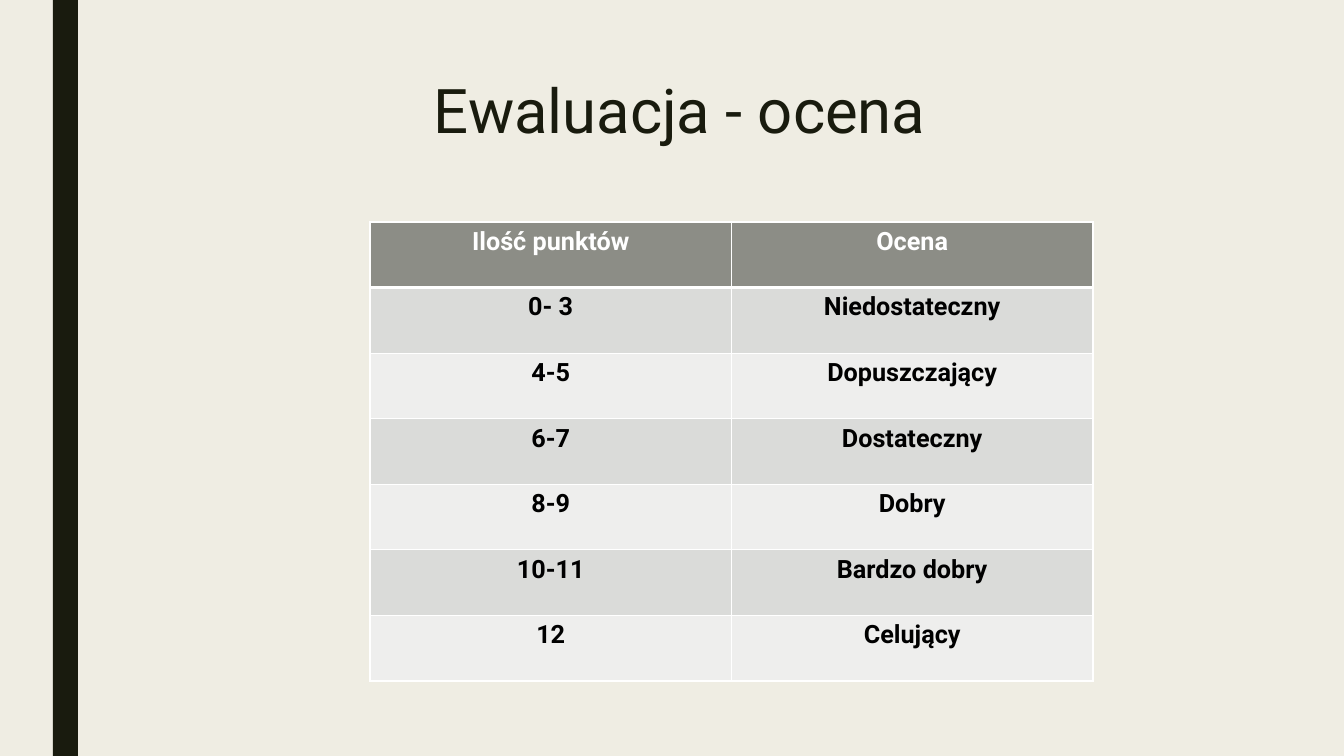
import pptx
import pptx.util
import pptx.dml.color
import pptx.enum.text
import pptx.oxml
import pptx.oxml.ns

RGBColor = pptx.dml.color.RGBColor
BACKGROUND = RGBColor(0xEF, 0xED, 0xE3)
DARK = RGBColor(0x19, 0x1B, 0x0E)
HEADER = RGBColor(0x8C, 0x8D, 0x86)
BAND_DARK = RGBColor(0xDA, 0xDB, 0xD9)
BAND_LIGHT = RGBColor(0xEE, 0xEE, 0xED)
WHITE = RGBColor(0xFF, 0xFF, 0xFF)
BLACK = RGBColor(0x00, 0x00, 0x00)

FONT = "Roboto"
SLIDE_WIDTH, SLIDE_HEIGHT = 1344, 756
EMU_PER_PX = 12192000 / SLIDE_WIDTH

GRADES = [
    ("Ilość punktów", "Ocena"),
    ("0- 3", "Niedostateczny"),
    ("4-5", "Dopuszczający"),
    ("6-7", "Dostateczny"),
    ("8-9", "Dobry"),
    ("10-11", "Bardzo dobry"),
    ("12", "Celujący"),
]


def px(length):
    return pptx.util.Emu(round(length * EMU_PER_PX))


def format_paragraph(paragraph, size, color, bold):
    paragraph.alignment = pptx.enum.text.PP_ALIGN.CENTER
    for run in paragraph.runs:
        run.font.name = FONT
        run.font.size = pptx.util.Pt(size)
        run.font.bold = bold
        run.font.color.rgb = color


def add_side_bar(slide, left, top, width, height):
    bar = slide.shapes.add_shape(
        pptx.enum.shapes.MSO_SHAPE.RECTANGLE, px(left), px(top), px(width), px(height))
    bar.shadow.inherit = False
    bar.fill.solid()
    bar.fill.fore_color.rgb = DARK
    bar.line.fill.background()


def place_title(slide, left, top, width, height):
    title = slide.shapes.title
    title.left, title.top = px(left), px(top)
    title.width, title.height = px(width), px(height)
    text_frame = title.text_frame
    text_frame.text = "Ewaluacja - ocena"
    text_frame.word_wrap = True
    text_frame.auto_size = pptx.enum.text.MSO_AUTO_SIZE.NONE
    text_frame.vertical_anchor = pptx.enum.text.MSO_ANCHOR.TOP
    paragraph = text_frame.paragraphs[0]
    paragraph.line_spacing = 0.89
    format_paragraph(paragraph, 44, DARK, False)


def set_cell_borders(cell, top_width, bottom_width):
    properties = cell._tc.get_or_add_tcPr()
    namespace = pptx.oxml.ns.nsdecls("a")
    widths = {"lnL": 1, "lnR": 1, "lnT": top_width, "lnB": bottom_width}
    for position, (tag, width) in enumerate(widths.items()):
        border = pptx.oxml.parse_xml(
            f'<a:{tag} {namespace} w="{pptx.util.Pt(width)}"><a:solidFill>'
            f'<a:srgbClr val="{WHITE}"/></a:solidFill></a:{tag}>')
        properties.insert(position, border)


def add_grade_table(slide, left, top, width, height):
    row_count, column_count = len(GRADES), len(GRADES[0])
    table = slide.shapes.add_table(
        row_count, column_count, px(left), px(top), px(width), px(height)).table
    for column in table.columns:
        column.width = px(width / column_count)
    for row_index, values in enumerate(GRADES):
        table.rows[row_index].height = px(height / row_count)
        is_header = row_index == 0
        band = BAND_DARK if row_index % 2 else BAND_LIGHT
        for column_index, value in enumerate(values):
            cell = table.cell(row_index, column_index)
            cell.text_frame.text = value
            cell.fill.solid()
            cell.fill.fore_color.rgb = HEADER if is_header else band
            format_paragraph(
                cell.text_frame.paragraphs[0], 18, WHITE if is_header else BLACK, True)
            set_cell_borders(cell, 3 if row_index == 1 else 1, 3 if is_header else 1)


def build_grade_slide(presentation):
    slide = presentation.slides.add_slide(presentation.slide_layouts[5])
    slide.background.fill.solid()
    slide.background.fill.fore_color.rgb = BACKGROUND
    add_side_bar(slide, 53, 0, 25, SLIDE_HEIGHT)
    place_title(slide, 151, 76, 1058, 90)
    add_grade_table(slide, 370, 222, 723, 459)


def main():
    presentation = pptx.Presentation()
    presentation.slide_width = px(SLIDE_WIDTH)
    presentation.slide_height = px(SLIDE_HEIGHT)
    build_grade_slide(presentation)
    presentation.save("out.pptx")


if __name__ == "__main__":
    import pptx.enum.shapes
    main()
